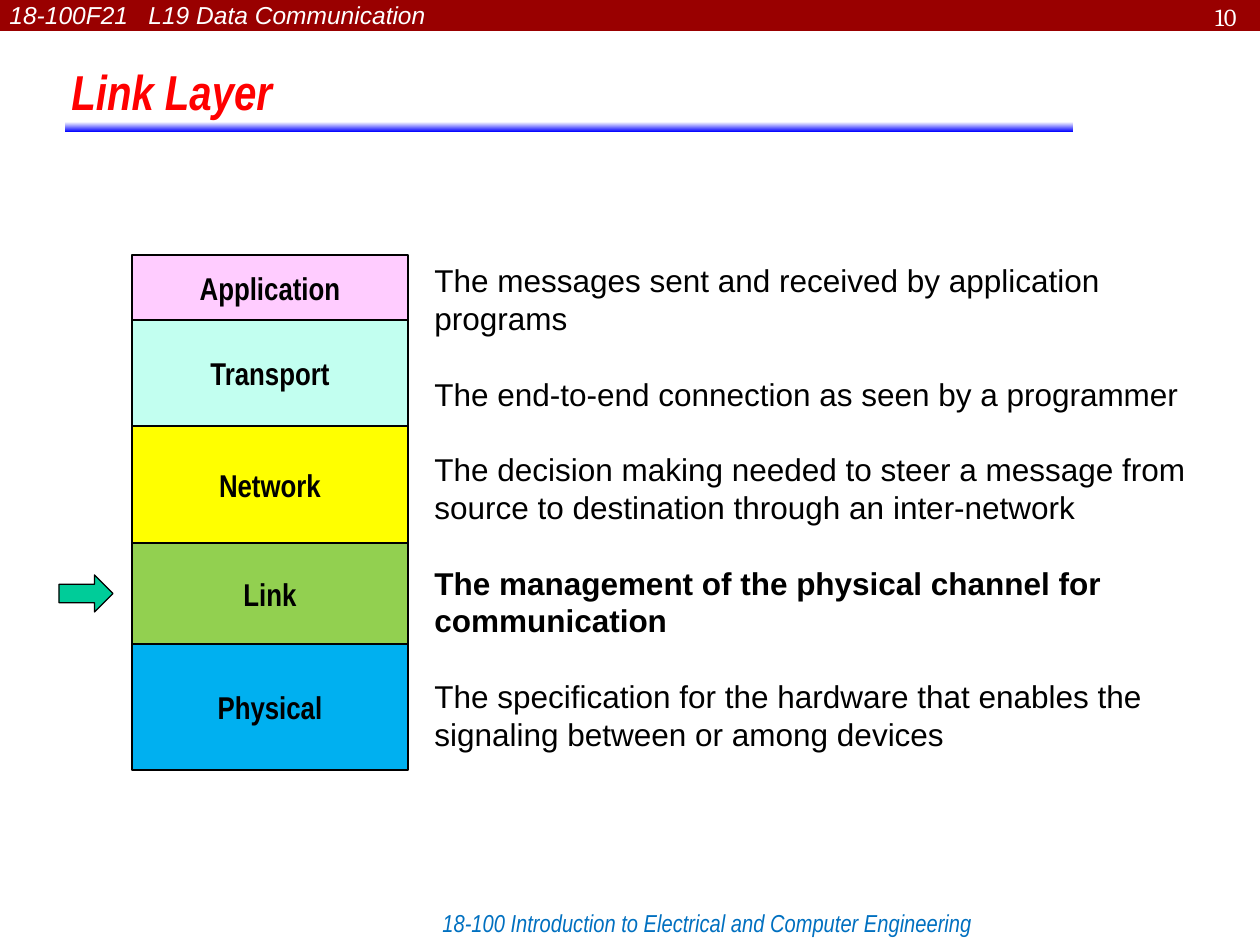
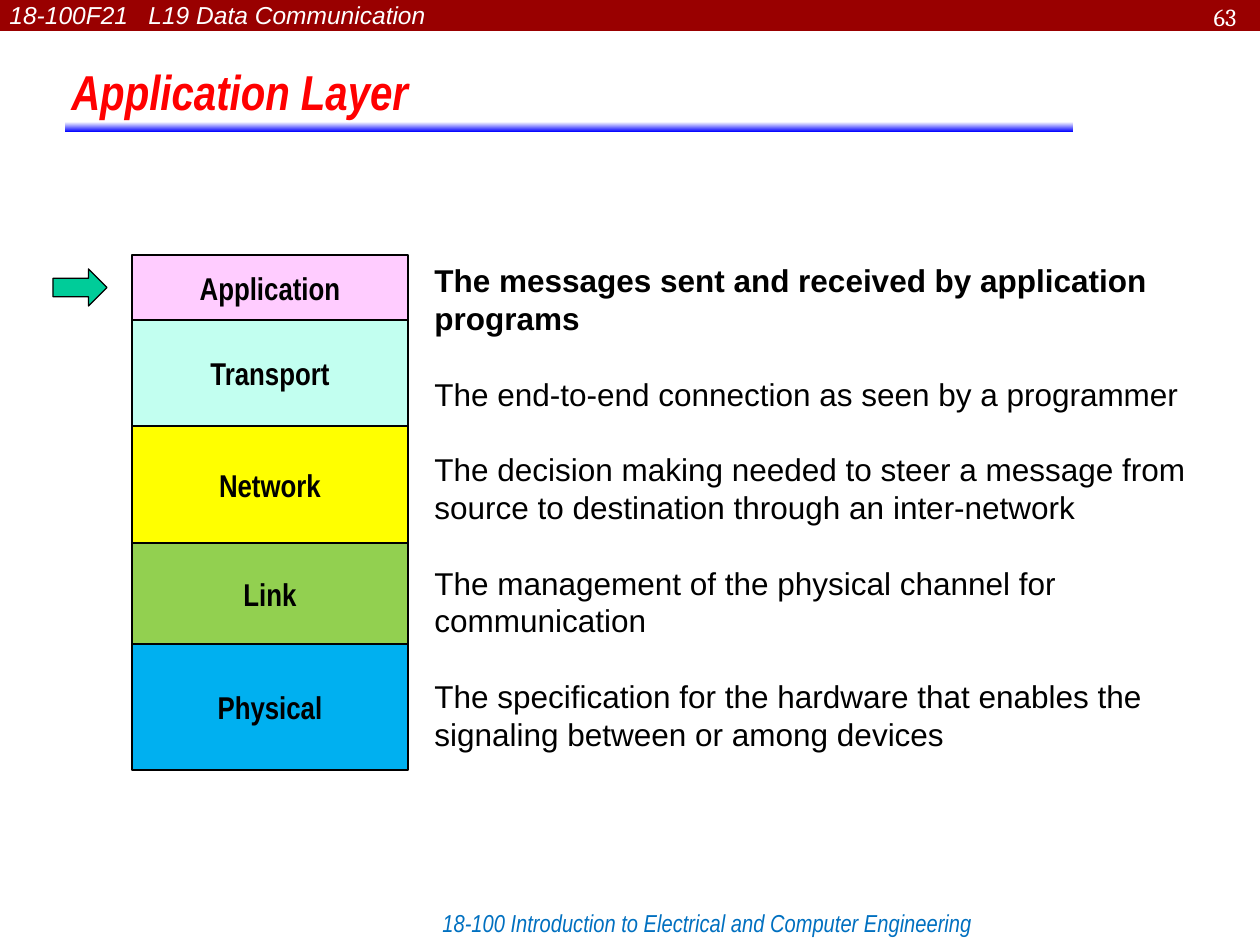
from pptx import Presentation
from pptx.dml.color import RGBColor
from pptx.enum.shapes import MSO_SHAPE
from pptx.enum.text import MSO_ANCHOR, PP_ALIGN
from pptx.oxml.ns import qn
from pptx.util import Pt
from lxml import etree

RECT, ARROW = MSO_SHAPE.RECTANGLE, MSO_SHAPE.RIGHT_ARROW
LEFT, MID, RIGHT = PP_ALIGN.LEFT, PP_ALIGN.CENTER, PP_ALIGN.RIGHT
TOP, CENTER = MSO_ANCHOR.TOP, MSO_ANCHOR.MIDDLE

SCALE = 914400 / 126
SANS, NARROW, SERIF = "Arial", "Arial Narrow", "Cambria"
BLACK, WHITE, RED = "000000", "FFFFFF", "FF0000"
MAROON, BLUE, TEAL, NAVY = "990000", "0000FF", "00CC99", "0070C0"

LAYERS = [
    ("Application", 65, "FFCCFF",
     "The messages sent and received by application programs"),
    ("Transport", 106, "C2FFF0",
     "The end-to-end connection as seen by a programmer"),
    ("Network", 117, "FFFF00",
     "The decision making needed to steer a message from source to "
     "destination through an inter-network"),
    ("Link", 101, "92D050",
     "The management of the physical channel for communication"),
    ("Physical", 126, "00B0F0",
     "The specification for the hardware that enables the signaling "
     "between or among devices"),
]


def px(*sizes):
    """Turn lengths in px into EMU."""
    return [round(size * SCALE) for size in sizes]


def color(code):
    """Make a colour from a hex string."""
    return RGBColor.from_string(code)


def write(frame, text, size=18, font=SANS, ink=BLACK, bold=False,
          italic=False, align=LEFT, anchor=TOP, wrap=True, first=True):
    """Write one paragraph into a text frame and return it."""
    frame.word_wrap = wrap
    frame.vertical_anchor = anchor
    para = frame.paragraphs[0] if first else frame.add_paragraph()
    para.alignment = align
    run = para.add_run()
    run.text = text
    style = run.font
    style.size, style.name = Pt(size), font
    style.bold, style.italic = bold, italic
    style.color.rgb = color(ink)
    return para


def label(slide, box, text, **style):
    """Add a text box with one paragraph."""
    frame = slide.shapes.add_textbox(*px(*box)).text_frame
    return write(frame, text, **style)


def draw(slide, kind, box, fill=None, line=None):
    """Add a flat preset shape."""
    shape = slide.shapes.add_shape(kind, *px(*box))
    shape.shadow.inherit = False
    if fill:
        shape.fill.solid()
        shape.fill.fore_color.rgb = color(fill)
    if line:
        shape.line.color.rgb = color(line)
        shape.line.width = Pt(0.75)
    else:
        shape.line.fill.background()
    return shape


def set_tab(para, pos):
    """Give a paragraph one left tab stop."""
    tabs = etree.SubElement(para._p.get_or_add_pPr(), qn("a:tabLst"))
    etree.SubElement(tabs, qn("a:tab"), pos=str(px(pos)[0]), algn="l")


def add_frame(slide, number):
    """Add the top band, course name, slide number and footer."""
    draw(slide, RECT, (0, 0, 1260, 31), MAROON)
    label(slide, (430, 902, 559, 43),
          "18-100 Introduction to Electrical and Computer Engineering",
          size=14, font=NARROW, ink=NAVY, italic=True, wrap=False)
    head = label(slide, (-3, -6, 941, 42), "18-100F21\tL19 Data Communication",
                 size=14, ink=WHITE, italic=True)
    set_tab(head, 139)
    label(slide, (1023, -4, 226, 32), str(number), size=14, font=SERIF,
          ink=WHITE, align=RIGHT)


def add_title(slide, text, width):
    """Add the title above its shaded rule."""
    fill = draw(slide, RECT, (65, 122, 1008, 10)).fill
    fill.gradient()
    fill.gradient_angle = 270
    for stop, code in zip(fill.gradient_stops, (WHITE, BLUE)):
        stop.color.rgb = color(code)
    label(slide, (59, 55, width, 72), text, size=28, font=NARROW, ink=RED,
          bold=True, italic=True, wrap=False)


def add_stack(slide, box, active, tip):
    """Stack the layers in a box and point an arrow at the active one."""
    left, top, width = box
    for name, height, fill, _ in LAYERS:
        cell = draw(slide, RECT, (left, top, width, height), fill, BLACK)
        write(cell.text_frame, name, font=NARROW, bold=True, align=MID,
              anchor=CENTER)
        if name == active:
            mid = top + height // 2
            draw(slide, ARROW, (tip - 54, mid - 18, 54, 37), TEAL, BLACK)
        top += height


def add_notes(slide, box, active):
    """List what each layer does, the active one in bold."""
    frame = slide.shapes.add_textbox(*px(*box)).text_frame
    for row, (name, _, _, text) in enumerate(LAYERS):
        para = write(frame, text, bold=name == active, first=row == 0)
        para.line_spacing = Pt(21.6)
        para.space_before = Pt(21.6 if row else 0)


def add_layer(deck, number, active, width, tip):
    """Build the slide for one layer."""
    slide = deck.slides.add_slide(deck.slide_layouts[6])
    add_frame(slide, number)
    add_title(slide, f"{active} Layer", width)
    add_stack(slide, (132, 255, 276), active, tip)
    add_notes(slide, (422, 255, 813, 509), active)


def main():
    """Build and save the deck."""
    deck = Presentation()
    deck.slide_width, deck.slide_height = px(1260, 945)
    add_layer(deck, 10, "Link", 228, 113)
    add_layer(deck, 63, "Application", 365, 107)
    deck.save("out.pptx")


if __name__ == "__main__":
    main()
